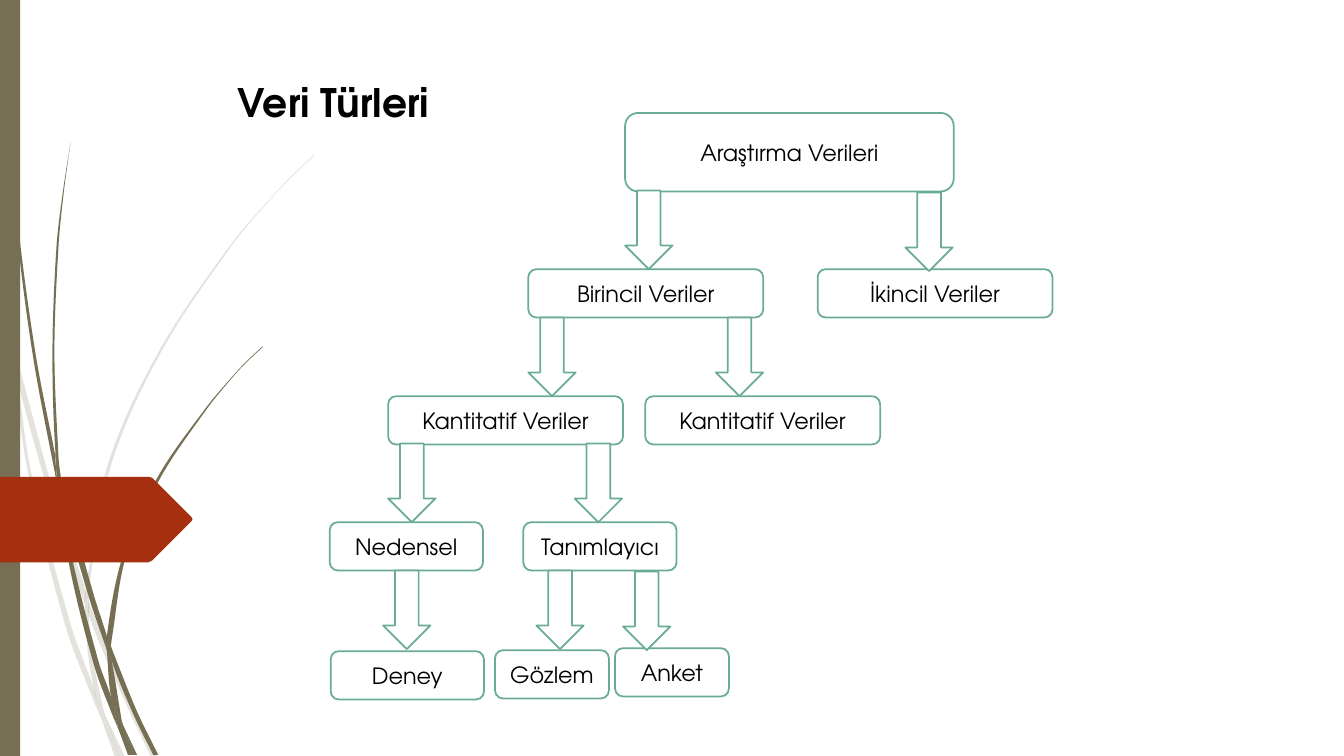
"""Build the "Veri Türleri" slide: a tree of research data types beside a grass motif."""
from math import dist, hypot

from lxml.etree import SubElement
from pptx import Presentation
from pptx.dml.color import RGBColor
from pptx.enum.shapes import MSO_SHAPE as SHAPE
from pptx.enum.text import MSO_ANCHOR as ANCHOR, MSO_AUTO_SIZE as AUTO_SIZE, PP_ALIGN as ALIGN
from pptx.oxml.ns import qn
from pptx.util import Pt

PX = 9144
FONT = "TeX Gyre Adventor"
OLIVE, RUST, GREEN, WHITE, BLACK = "766F54", "A53010", "6AAC91", "FFFFFF", "000000"


def paint(shape, fill, line=None, opacity=100):
    """Fill a shape and give it a thin outline, or none."""
    shape.shadow.inherit = False
    shape.fill.solid()
    shape.fill.fore_color.rgb = RGBColor.from_string(fill)
    if opacity < 100:
        color = shape._element.xpath("./p:spPr/a:solidFill/a:srgbClr")[0]
        SubElement(color, qn("a:alpha"), val=str(opacity * 1000))
    if line:
        shape.line.color.rgb = RGBColor.from_string(line)
        shape.line.width = Pt(1.25)
    else:
        shape.line.fill.background()


def add_blade(shapes, points):
    """Draw a closed curve through points, keeping sharp turns as corners."""
    handles = []
    for before, point, after in zip([points[-1], *points], points, [*points[1:], points[0]]):
        incoming = [(b - a) / dist(before, point) for a, b in zip(before, point)]
        outgoing = [(b - a) / dist(point, after) for a, b in zip(point, after)]
        if incoming[0] * outgoing[0] + incoming[1] * outgoing[1] > 0.8:
            x, y = after[0] - before[0], after[1] - before[1]
            tangent = (x / hypot(x, y), y / hypot(x, y))
            handles.append((tangent, tangent))
        else:
            handles.append((incoming, outgoing))
    curve = []
    for index, start in enumerate(points):
        following = (index + 1) % len(points)
        end = points[following]
        reach = dist(start, end) / 3
        leave, arrive = handles[index][1], handles[following][0]
        curve += [(start[0] + reach * leave[0], start[1] + reach * leave[1]),
                  (end[0] - reach * arrive[0], end[1] - reach * arrive[1]), end]
    builder = shapes.build_freeform(points[0][0] * PX, points[0][1] * PX)
    builder.add_line_segments([(x * PX, y * PX) for x, y in curve], close=True)
    blade = builder.convert_to_shape()
    lines = blade._element.xpath(".//a:lnTo")
    for first, second, third in zip(lines[::3], lines[1::3], lines[2::3]):
        first.tag = qn("a:cubicBezTo")
        for line in (second, third):
            first.append(line[0])
            line.getparent().remove(line)
    return blade


presentation = Presentation()
presentation.slide_width, presentation.slide_height = 1333 * PX, 750 * PX
slide = presentation.slides.add_slide(presentation.slide_layouts[5])
shapes = slide.shapes

pale_blades = [
    [(11, 350), (9, 322), (0, 282), (0, 299), (10, 344)],
    [(58, 522), (84, 599), (85, 586), (62, 520), (14, 345), (17, 376)],
    [(92, 607), (88, 596), (88, 610), (123, 694), (150, 751), (155, 751), (127, 692)],
    [(119, 751), (124, 751), (105, 711)],
    [(93, 683), (70, 619), (31, 469), (17, 376), (11, 350), (28, 470), (65, 621), (92, 693),
     (101, 714), (99, 707)],
    [(84, 599), (87, 646), (93, 683), (96, 692), (105, 711), (103, 706), (91, 646), (88, 610),
     (88, 608)],
    [(88, 584), (110, 462), (160, 349), (229, 245), (268, 198), (290, 175), (312, 154), (312, 153),
     (289, 175), (268, 197), (228, 244), (158, 348), (107, 461), (85, 584), (85, 586), (88, 596)],
    [(101, 714), (114, 751), (119, 751)],
    [(88, 608), (88, 610), (88, 596), (85, 586), (84, 599)],
    [(96, 692), (93, 683), (99, 707), (101, 714), (119, 751), (105, 711)],
]
dark_blades = [
    [(7, 110), (17, 233), (33, 355), (56, 477), (57, 481), (55, 457), (55, 453), (36, 355),
     (19, 232), (8, 109), (5, 48), (4, 0), (3, 0), (4, 48)],
    [(88, 592), (106, 645), (106, 633), (106, 631), (93, 590), (60, 472), (64, 505)],
    [(113, 649), (110, 641), (111, 656), (132, 708), (152, 749), (157, 749), (136, 706)],
    [(110, 691), (98, 657), (72, 556), (64, 505), (57, 477), (68, 557), (93, 659), (111, 708),
     (117, 722), (116, 717)],
    [(60, 472), (58, 453), (54, 349), (58, 245), (63, 193), (70, 141), (62, 193), (56, 245),
     (52, 349), (55, 449)],
    [(133, 749), (136, 749), (122, 719)],
    [(57, 477), (64, 505), (60, 472), (55, 449), (55, 453)],
    [(111, 633), (125, 552), (158, 476), (205, 406), (231, 374), (245, 359), (261, 344), (260, 344),
     (245, 358), (231, 373), (204, 405), (156, 474), (122, 551), (106, 631), (110, 641)],
    [(117, 722), (127, 749), (131, 749)],
    [(106, 645), (110, 691), (116, 706), (122, 719), (121, 716), (111, 656), (109, 651)],
    [(106, 645), (109, 651), (111, 656), (110, 641), (106, 631), (106, 633)],
    [(116, 706), (110, 691), (116, 717), (117, 722), (130, 749), (133, 749), (122, 719)],
]
for blades, opacity in ((pale_blades, 20), (dark_blades, 100)):
    group = shapes.add_group_shape()
    for points in blades:
        paint(add_blade(group.shapes, points), OLIVE, opacity=opacity)

paint(shapes.add_shape(SHAPE.RECTANGLE, 0, 0, 20 * PX, 750 * PX), OLIVE)

builder = shapes.build_freeform(0, 473, scale=PX)
builder.add_line_segments([(147, 473), (151, 474), (190, 513), (191, 515), (190, 517), (151, 556),
                           (147, 558), (0, 558)], close=True)
paint(builder.convert_to_shape(), RUST)

title = shapes.title
title.left, title.top, title.width, title.height = 226 * PX, 73 * PX, 1062 * PX, 104 * PX
title_frame = title.text_frame
title_frame.text = "Veri Türleri"
title_frame.word_wrap = True
title_frame.auto_size = AUTO_SIZE.NONE
title_frame.vertical_anchor = ANCHOR.TOP
title_frame.paragraphs[0].alignment = ALIGN.JUSTIFY
title_font = title_frame.paragraphs[0].runs[0].font
title_font.name, title_font.size, title_font.bold = FONT, Pt(28), True
title_font.color.rgb = RGBColor.from_string(BLACK)

boxes = [
    ("Araştırma Verileri", 620, 112, 326, 78),
    ("İkincil Veriler", 811, 267, 233, 48),
    ("Birincil Veriler", 524, 267, 233, 48),
    ("Kantitatif Veriler", 385, 393, 233, 48),
    ("Kantitatif Veriler", 640, 393, 233, 48),
    ("Nedensel", 327, 518, 152, 48),
    ("Deney", 328, 646, 152, 48),
    ("Tanımlayıcı", 519, 518, 152, 48),
    ("Gözlem", 491, 645, 113, 48),
    ("Anket", 610, 643, 113, 48),
]
for label, left, top, width, height in boxes:
    box = shapes.add_shape(SHAPE.ROUNDED_RECTANGLE, left * PX, top * PX, width * PX, height * PX)
    paint(box, WHITE, GREEN)
    box.text_frame.text = label
    box.text_frame.word_wrap = True
    box.text_frame.vertical_anchor = ANCHOR.MIDDLE
    paragraph = box.text_frame.paragraphs[0]
    paragraph.alignment = ALIGN.CENTER
    font = paragraph.runs[0].font
    font.name, font.size = FONT, Pt(16)
    font.color.rgb = RGBColor.from_string(BLACK)

arrows = [(620, 189), (710, 315), (898, 191), (524, 315), (385, 440), (570, 440),
          (380, 566), (532, 566), (618, 567)]
for left, top in arrows:
    arrow = shapes.add_shape(SHAPE.DOWN_ARROW, left * PX, top * PX, 47 * PX, 78 * PX)
    paint(arrow, WHITE, GREEN)

presentation.save("out.pptx")
